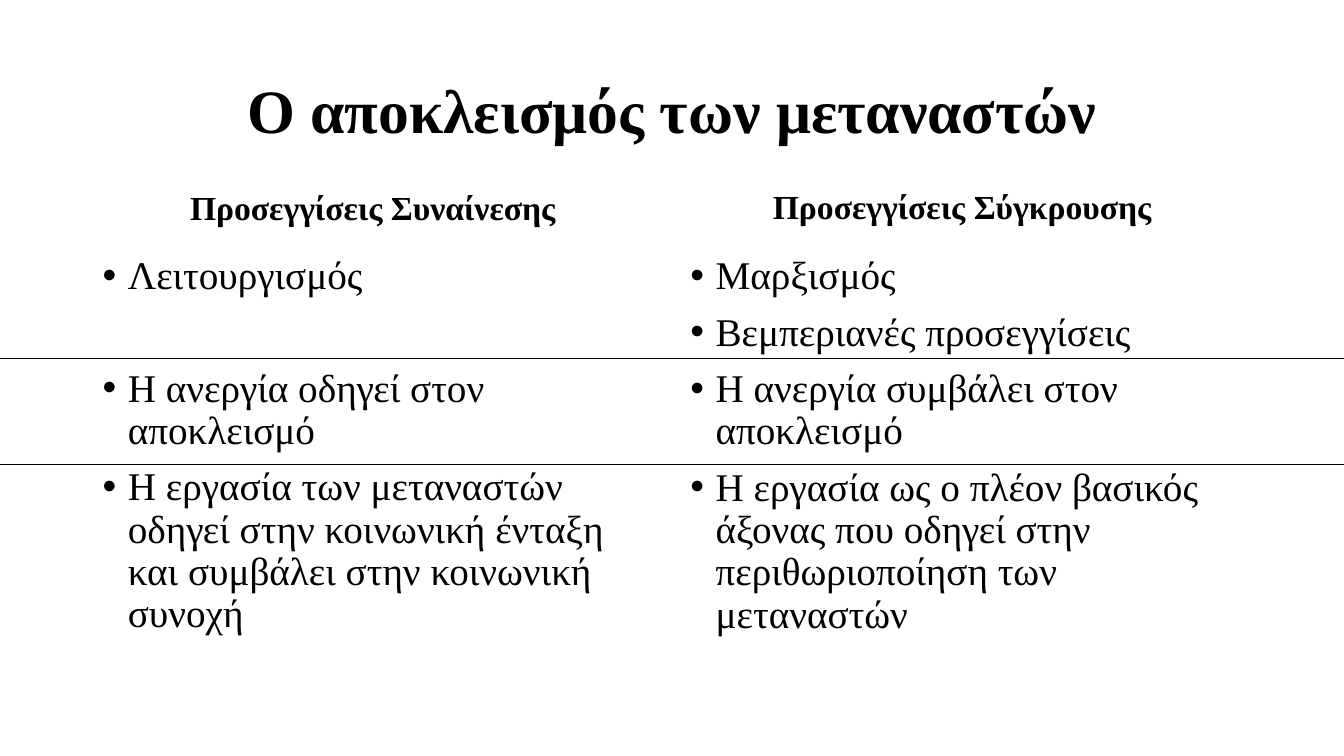
from typing import NamedTuple

from lxml import etree
from pptx import Presentation
from pptx import util as u
from pptx.dml.color import RGBColor
from pptx.enum import shapes, text
from pptx.oxml.ns import qn

PX = 9144  # 100 px to the inch
WIDTH, HEIGHT = 1333, 750
FONT = "Times New Roman"
BLACK = "000000"
GAP = 10  # points before each paragraph
EMPTY_ROW = 40  # points taken by one line and its gap


class Box(NamedTuple):
    left: int
    top: int
    width: int
    height: int


class Bullet(NamedTuple):
    text: str
    before: int = GAP


class Column(NamedTuple):
    heading: str
    heading_box: Box
    heading_spacing: float
    body_box: Box
    bullets: list[Bullet]


TITLE_BOX = Box(92, 40, 1150, 145)
DIVIDERS = (356, 461)
COLUMNS = [
    Column("Προσεγγίσεις Συναίνεσης ", Box(92, 185, 564, 45), 0.8,
           Box(92, 249, 564, 403), [
               Bullet("Λειτουργισμός"),
               Bullet("Η ανεργία οδηγεί στον αποκλεισμό", GAP + EMPTY_ROW),
               Bullet("Η εργασία των μεταναστών οδηγεί στην κοινωνική ένταξη "
                      "και συμβάλει στην κοινωνική συνοχή"),
           ]),
    Column("Προσεγγίσεις Σύγκρουσης ", Box(675, 175, 567, 55), 0.9,
           Box(675, 249, 567, 428), [
               Bullet("Μαρξισμός"),
               Bullet("Βεμπεριανές προσεγγίσεις"),
               Bullet("Η ανεργία συμβάλει στον αποκλεισμό"),
               Bullet("Η εργασία ως ο πλέον βασικός άξονας που οδηγεί στην "
                      "περιθωριοποίηση των μεταναστών"),
           ]),
]


def color(value: str) -> RGBColor:
    return RGBColor.from_string(value)


def emu(box: Box) -> list[int]:
    return [length * PX for length in box]


def style(p, size: int, bold: bool, spacing: float, before: int) -> None:
    p.font.name, p.font.size, p.font.bold = FONT, u.Pt(size), bold
    p.font.color.rgb = color(BLACK)
    p.line_spacing, p.space_before = spacing, u.Pt(before)
    p.alignment = text.PP_ALIGN.CENTER if bold else text.PP_ALIGN.LEFT


def add_bullet_mark(p) -> None:
    pPr = p._p.get_or_add_pPr()
    pPr.set("marL", str(25 * PX))
    pPr.set("indent", str(-25 * PX))
    font = etree.Element(qn("a:buFont"), typeface="Arial")
    mark = etree.Element(qn("a:buChar"), char="•")
    defaults = pPr.find(qn("a:defRPr"))
    defaults.addprevious(font)
    defaults.addprevious(mark)


def add_text_frame(slide, box: Box, anchor):
    tf = slide.shapes.add_textbox(*emu(box)).text_frame
    tf.word_wrap = True
    tf.vertical_anchor = anchor
    return tf


def set_title(slide, title: str) -> None:
    sp = slide.shapes.title
    sp.left, sp.top, sp.width, sp.height = emu(TITLE_BOX)
    tf = sp.text_frame
    tf.text = title
    tf.auto_size = text.MSO_AUTO_SIZE.NONE
    tf.vertical_anchor = text.MSO_ANCHOR.MIDDLE
    style(tf.paragraphs[0], 44, True, 0.9, 0)


def add_column(slide, column: Column) -> None:
    tf = add_text_frame(slide, column.heading_box, text.MSO_ANCHOR.BOTTOM)
    tf.text = column.heading
    style(tf.paragraphs[0], 24, True, column.heading_spacing, GAP)

    tf = add_text_frame(slide, column.body_box, text.MSO_ANCHOR.TOP)
    for i, bullet in enumerate(column.bullets):
        p = tf.add_paragraph() if i else tf.paragraphs[0]
        p.text = bullet.text
        style(p, 28, False, 0.9, bullet.before)
        add_bullet_mark(p)


def add_divider(slide, y: int) -> None:
    line = slide.shapes.add_connector(
        shapes.MSO_CONNECTOR.STRAIGHT, 0, y * PX, WIDTH * PX, y * PX)
    line.line.color.rgb = color(BLACK)
    line.line.width = u.Pt(0.5)
    etree.SubElement(line._element.spPr, qn("a:effectLst"))


def main() -> None:
    prs = Presentation()
    prs.slide_width, prs.slide_height = WIDTH * PX, HEIGHT * PX
    slide = prs.slides.add_slide(prs.slide_layouts[5])  # title only

    # Title
    set_title(slide, "Ο αποκλεισμός των μεταναστών")

    # The two approaches side by side
    for column in COLUMNS:
        add_column(slide, column)

    # Lines between the topics
    for y in DIVIDERS:
        add_divider(slide, y)

    prs.save("out.pptx")


if __name__ == "__main__":
    main()
